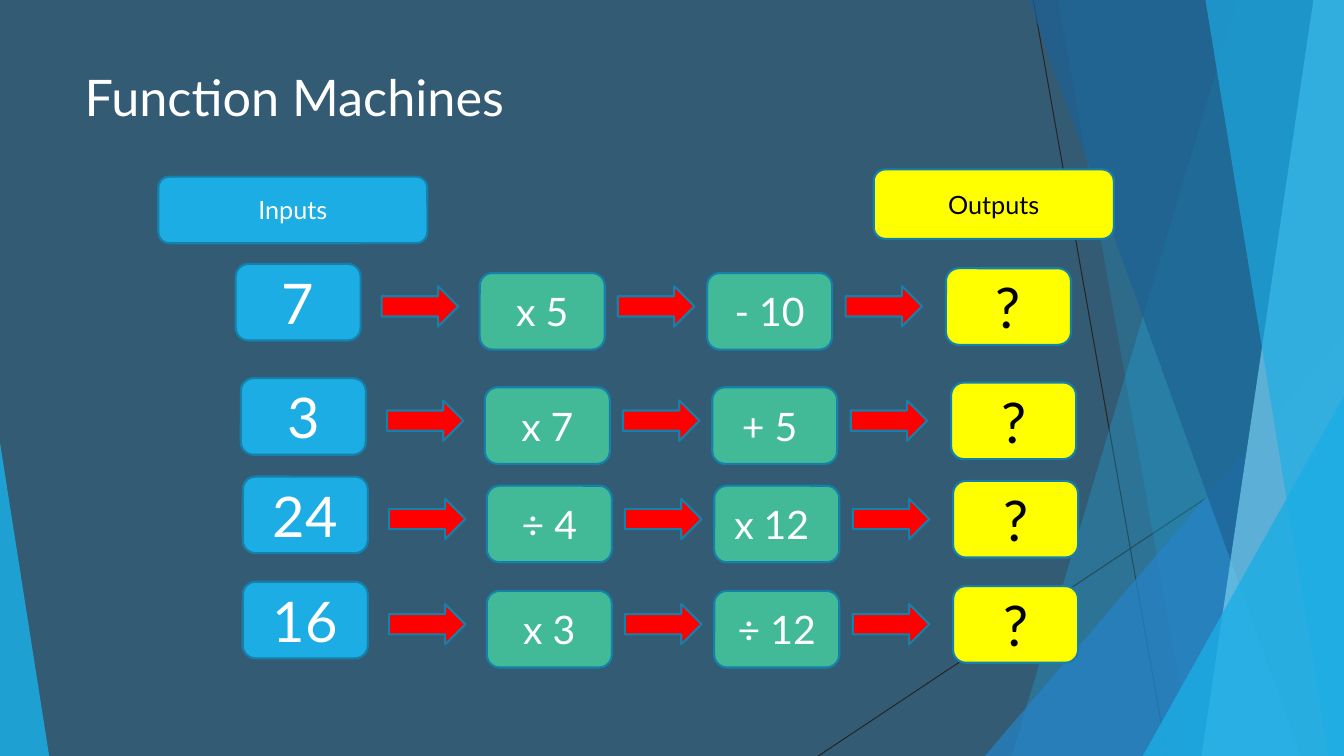
import pptx
import pptx.util
import pptx.dml.color
import pptx.enum.shapes
import pptx.enum.text
import pptx.oxml
import pptx.oxml.ns
from lxml import etree

Cm = pptx.util.Cm
Pt = pptx.util.Pt
SHAPE = pptx.enum.shapes.MSO_SHAPE
ALIGN = pptx.enum.text.PP_ALIGN
ANCHOR = pptx.enum.text.MSO_ANCHOR

FONT = "Lato"
WIDTH, HEIGHT = 33.87, 19.05
COLORS = {
    "background": "335B74",
    "input": "1CADE4",
    "operation": "42BA97",
    "output": "FFFF00",
    "arrow": "FF0000",
    "outline": "1580A9",
    "thin_line": "262626",
    "light_text": "FFFFFF",
    "dark_text": "000000",
    "blue": "2683C6",
    "deep_blue": "1D6294",
    "pale_blue": "77CEEF",
}
THIN_LINES = [(26.04, 0, 29.41, HEIGHT), (WIDTH, 10.24, 20.62, HEIGHT)]
BACK_BANDS = [(31.19, 25.5, "input", 30), (26.67, 30.05, "input", 20)]
FRONT_BANDS = [
    (25.93, 32.79, "deep_blue", 70),
    (33.1, 30.28, "pale_blue", 70),
    (30.38, 33.48, "input", 65),
]
MACHINES = [
    (5.94, 6.65, "7", "x 5", "- 10"),
    (6.07, 9.53, "3", "x 7", "+ 5 "),
    (6.12, 12.01, "24", "÷ 4", "x 12 "),
    (6.12, 14.66, "16", "x 3", "÷ 12"),
]
ARROW_OFFSETS = [3.68, 9.63, 15.37]
OPERATION_OFFSETS = [6.15, 11.88]
BOX_SIZE = (3.15, 1.93)


def rgb(name):
    return pptx.dml.color.RGBColor.from_string(COLORS[name])


def paint(shape, color, opacity=100, outlined=False):
    shape.shadow.inherit = False
    shape.fill.solid()
    shape.fill.fore_color.rgb = rgb(color)
    if opacity < 100:
        color_element = shape.element.find(".//" + pptx.oxml.ns.qn("a:srgbClr"))
        alpha = etree.SubElement(color_element, pptx.oxml.ns.qn("a:alpha"))
        alpha.set("val", str(opacity * 1000))
    if outlined:
        shape.line.color.rgb = rgb("outline")
        shape.line.width = Pt(1.5)
    else:
        shape.line.fill.background()


def write(shape, text, size, color, align):
    frame = shape.text_frame
    frame.text = text
    frame.word_wrap = True
    frame.vertical_anchor = ANCHOR.MIDDLE
    paragraph = frame.paragraphs[0]
    paragraph.alignment = align
    paragraph.font.name = FONT
    paragraph.font.size = Pt(size)
    paragraph.font.color.rgb = rgb(color)


def add_preset(slide, kind, left, top, width, height):
    return slide.shapes.add_shape(kind, Cm(left), Cm(top), Cm(width), Cm(height))


def add_thin_line(slide, x1, y1, x2, y2):
    line = slide.shapes.add_connector(
        pptx.enum.shapes.MSO_CONNECTOR.STRAIGHT, Cm(x1), Cm(y1), Cm(x2), Cm(y2))
    line.line.color.rgb = rgb("thin_line")
    line.line.width = Pt(0.75)
    etree.SubElement(line.element.spPr, pptx.oxml.ns.qn("a:effectLst"))


def add_band(slide, top_x, bottom_x, color, opacity):
    builder = slide.shapes.build_freeform(Cm(top_x), 0)
    corners = [(WIDTH, 0), (WIDTH, HEIGHT), (bottom_x, HEIGHT)]
    builder.add_line_segments([(Cm(x), Cm(y)) for x, y in corners], close=True)
    paint(builder.convert_to_shape(), color, opacity)


def add_corner(slide, left, top, width, apex, color, opacity):
    corner = add_preset(slide, SHAPE.ISOSCELES_TRIANGLE, left, top, width, HEIGHT - top)
    corner.adjustments[0] = apex
    paint(corner, color, opacity)


def add_box(slide, left, top, size, text, font_size, color):
    box = add_preset(slide, SHAPE.ROUNDED_RECTANGLE, left, top, *size)
    paint(box, color, outlined=True)
    text_color = "dark_text" if color == "output" else "light_text"
    write(box, text, font_size, text_color, ALIGN.CENTER)


def add_arrow(slide, left, top):
    arrow = add_preset(slide, SHAPE.RIGHT_ARROW, left, top, 1.93, 1.02)
    paint(arrow, "arrow", outlined=True)


def add_machine(slide, left, top, value, *operations):
    add_box(slide, left, top, BOX_SIZE, value, 40, "input")
    for offset in ARROW_OFFSETS:
        add_arrow(slide, left + offset, top + 0.56)
    for offset, operation in zip(OPERATION_OFFSETS, operations):
        add_box(slide, left + offset, top + 0.23, BOX_SIZE, operation, 28, "operation")
    add_box(slide, left + 17.9, top + 0.11, BOX_SIZE, "?", 40, "output")


def add_backdrop(slide):
    slide.background.fill.solid()
    slide.background.fill.fore_color.rgb = rgb("background")
    for ends in THIN_LINES:
        add_thin_line(slide, *ends)
    for band in BACK_BANDS:
        add_band(slide, *band)
    add_corner(slide, 24.82, 8.46, 9.05, 1, "blue", 72)
    for band in FRONT_BANDS:
        add_band(slide, *band)
    add_corner(slide, 28.8, 9.98, 5.07, 1, "input", 80)
    add_corner(slide, 0, 11.15, 1.24, 0, "input", 85)


def place_title(slide, text):
    title = slide.shapes.title
    title.left, title.top = Cm(1.88), Cm(0.61)
    title.width, title.height = Cm(23.88), Cm(3.66)
    write(title, text, 36, "light_text", ALIGN.LEFT)
    title.element.getparent().append(title.element)


def main():
    presentation = pptx.Presentation()
    presentation.slide_width = Cm(WIDTH)
    presentation.slide_height = Cm(HEIGHT)
    slide = presentation.slides.add_slide(presentation.slide_layouts[5])
    add_backdrop(slide)
    place_title(slide, "Function Machines")
    add_box(slide, 3.99, 4.45, (6.78, 1.68), "Inputs", 18, "input")
    add_box(slide, 22.02, 4.27, (6.05, 1.75), "Outputs", 18, "output")
    for machine in MACHINES:
        add_machine(slide, *machine)
    presentation.save("out.pptx")


if __name__ == "__main__":
    main()
